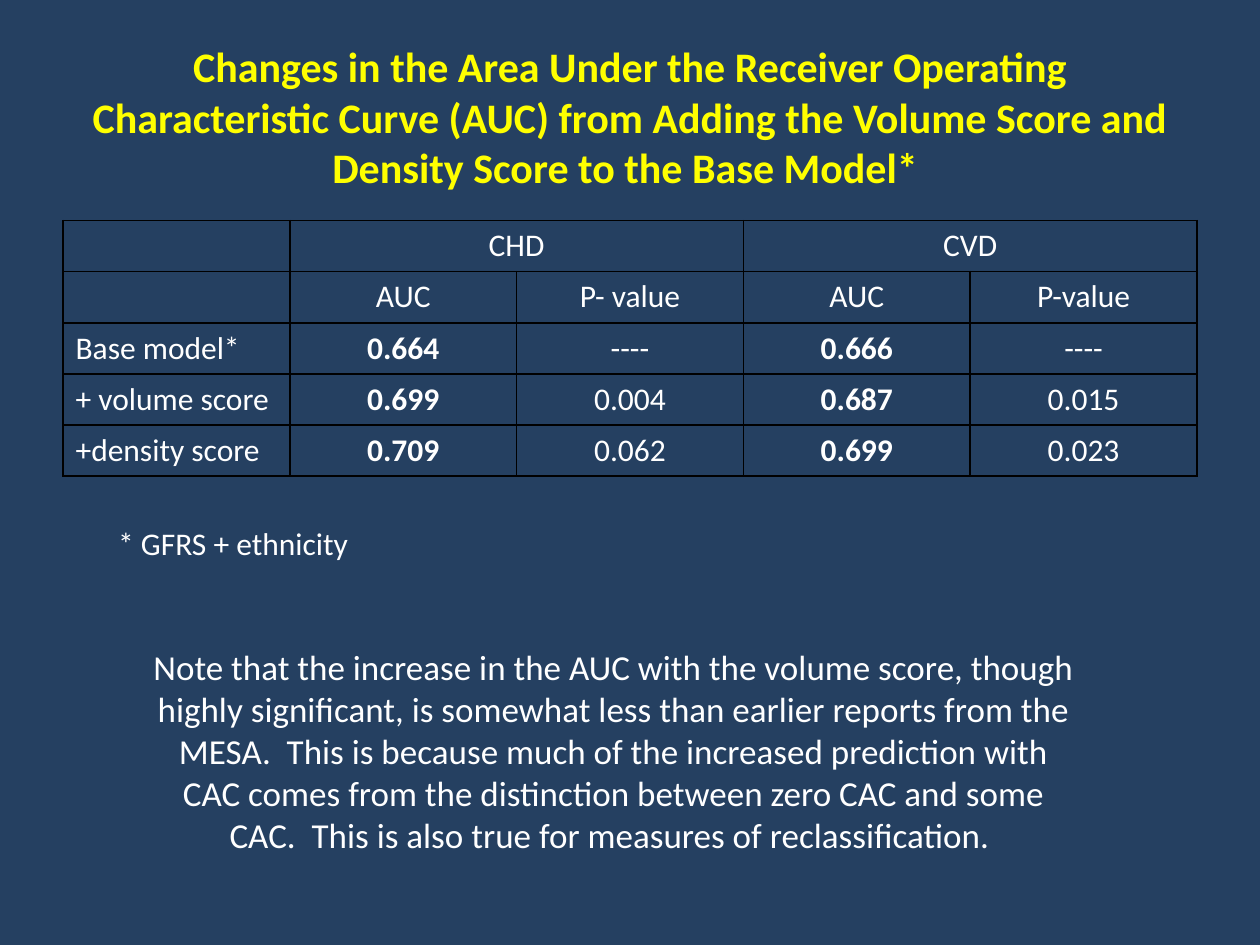
from dataclasses import dataclass
from typing import Any

from lxml.etree import SubElement
from pptx import Presentation
from pptx.dml.color import RGBColor
from pptx.enum.text import MSO_ANCHOR, MSO_AUTO_SIZE, PP_ALIGN
from pptx.oxml.ns import qn
from pptx.util import Emu, Pt

EMU_PER_PX = 9144
NAVY = RGBColor(0x25, 0x40, 0x61)
YELLOW = RGBColor(0xFF, 0xFF, 0x00)
WHITE = RGBColor(0xFF, 0xFF, 0xFF)
BLACK = RGBColor(0x00, 0x00, 0x00)


def px(length: int) -> Emu:
    return Emu(length * EMU_PER_PX)


@dataclass(frozen=True)
class Box:
    left: int
    top: int
    width: int
    height: int

    def emu(self) -> tuple[Emu, Emu, Emu, Emu]:
        return px(self.left), px(self.top), px(self.width), px(self.height)


@dataclass(frozen=True)
class Style:
    size: int
    color: RGBColor = WHITE
    bold: bool = False
    align: PP_ALIGN = PP_ALIGN.CENTER


@dataclass(frozen=True)
class Remark:
    text: str
    box: Box
    style: Style


TITLE = (
    "Changes in the Area Under the Receiver Operating Characteristic Curve (AUC) "
    "from Adding the Volume Score and Density Score to the Base Model* "
)
TITLE_BOX = Box(50, 30, 900, 125)
TITLE_STYLE = Style(24, YELLOW, bold=True)

AUC_BOX = Box(50, 175, 900, 203)
AUC_ROWS = [
    ["", "CHD", "", "CVD", ""],
    ["", "AUC", "P- value", "AUC", "P-value"],
    ["Base model*", "0.664", "----", "0.666", "----"],
    ["+ volume score", "0.699", "0.004", "0.687", "0.015"],
    ["+density score", "0.709", "0.062", "0.699", "0.023"],
]
HEADER_ROWS = 2
OUTCOME_COLUMNS = (1, 3)

REMARKS = [
    Remark("* GFRS + ethnicity", Box(84, 411, 210, 40), Style(18, align=PP_ALIGN.LEFT)),
    Remark(
        "Note that the increase in the AUC with the volume score, though highly "
        "significant, is somewhat less than earlier reports from the MESA.  This is "
        "because much of the increased prediction with CAC comes from the distinction "
        "between zero CAC and some CAC.  This is also true for measures of "
        "reclassification. ",
        Box(109, 507, 756, 178),
        Style(20),
    ),
]


def apply(target: Any, formats: dict[str, Any]) -> None:
    for attribute, value in formats.items():
        setattr(target, attribute, value)


def write(frame: Any, text: str, style: Style) -> None:
    frame.text = text
    paragraph = frame.paragraphs[0]
    paragraph.alignment = style.align
    apply(paragraph.font, {"name": "Calibri", "size": Pt(style.size), "bold": style.bold})
    for run in paragraph.runs:
        apply(run.font, {"name": "Calibri", "size": Pt(style.size), "bold": style.bold})
        run.font.color.rgb = style.color


def draw_borders(cell: Any) -> None:
    properties = cell._tc.get_or_add_tcPr()
    for side in ("a:lnL", "a:lnR", "a:lnT", "a:lnB"):
        line = SubElement(properties, qn(side), w=str(Pt(1)))
        fill = SubElement(line, qn("a:solidFill"))
        SubElement(fill, qn("a:srgbClr"), val=str(BLACK))


def cell_style(row: int, column: int) -> Style:
    if column == 0:
        return Style(18, align=PP_ALIGN.LEFT)
    return Style(18, bold=row >= HEADER_ROWS and column in OUTCOME_COLUMNS)


def draw_title(slide: Any) -> None:
    title = slide.shapes.title
    apply(title, dict(zip(("left", "top", "width", "height"), TITLE_BOX.emu())))
    apply(title.text_frame, {
        "word_wrap": True,
        "auto_size": MSO_AUTO_SIZE.NONE,
        "vertical_anchor": MSO_ANCHOR.MIDDLE,
    })
    write(title.text_frame, TITLE, TITLE_STYLE)


def draw_auc_table(slide: Any) -> None:
    frame = slide.shapes.add_table(len(AUC_ROWS), len(AUC_ROWS[0]), *AUC_BOX.emu())
    table = frame.table
    apply(table, {"first_row": False, "horz_banding": False})
    for row, texts in enumerate(AUC_ROWS):
        for column, text in enumerate(texts):
            cell = table.cell(row, column)
            draw_borders(cell)
            cell.fill.background()
            write(cell.text_frame, text, cell_style(row, column))
    for column in OUTCOME_COLUMNS:
        table.cell(0, column).merge(table.cell(0, column + 1))


def draw_remark(slide: Any, remark: Remark) -> None:
    frame = slide.shapes.add_textbox(*remark.box.emu()).text_frame
    apply(frame, {"word_wrap": True, "auto_size": MSO_AUTO_SIZE.SHAPE_TO_FIT_TEXT})
    write(frame, remark.text, remark.style)


def main() -> None:
    deck = Presentation()
    apply(deck, {"slide_width": px(1000), "slide_height": px(750)})
    slide = deck.slides.add_slide(deck.slide_layouts.get_by_name("Title Only"))
    slide.background.fill.solid()
    slide.background.fill.fore_color.rgb = NAVY
    draw_title(slide)
    draw_auc_table(slide)
    for remark in REMARKS:
        draw_remark(slide, remark)
    deck.save("out.pptx")


if __name__ == "__main__":
    main()
